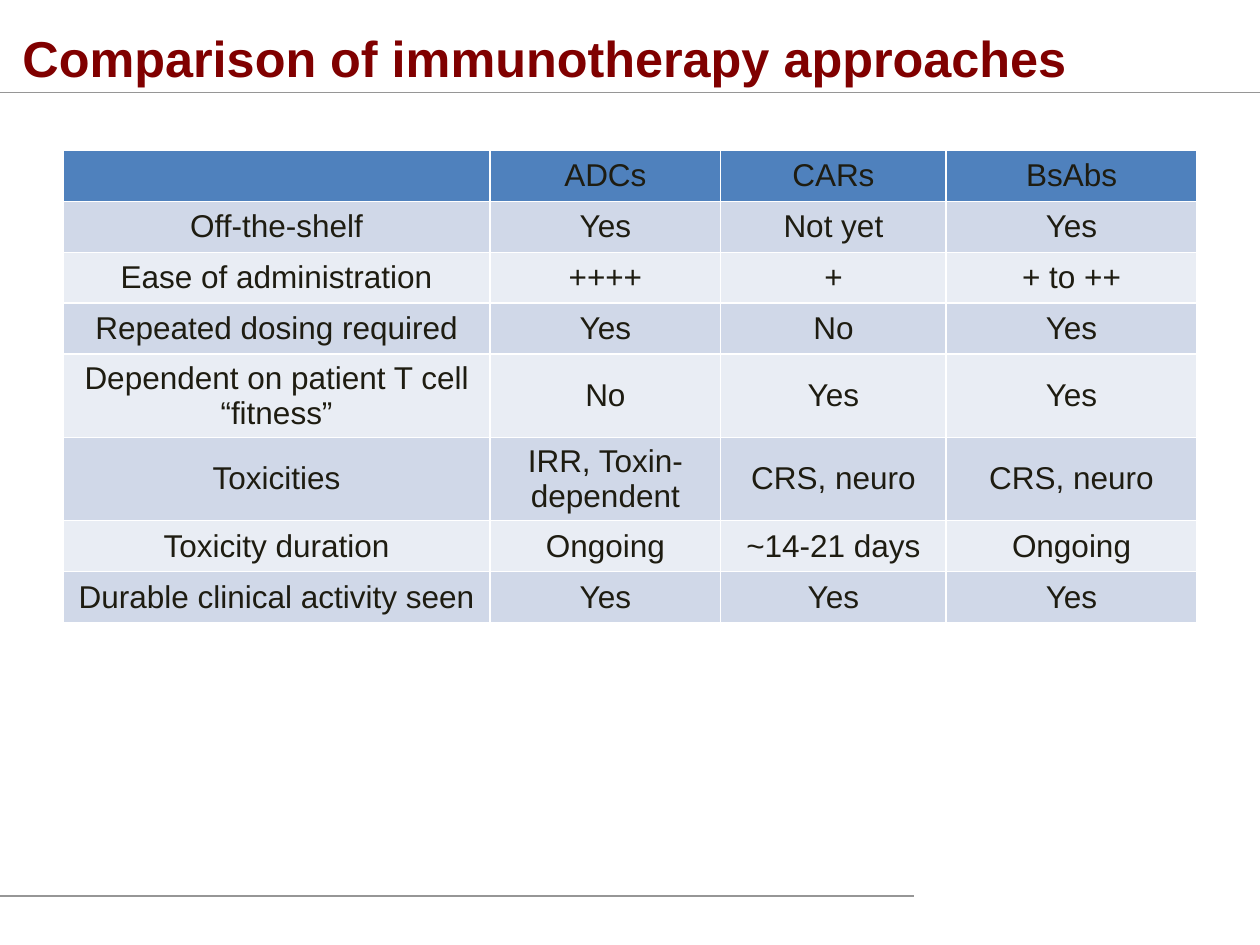
from lxml import etree
from pptx import Presentation
from pptx.dml.color import RGBColor
from pptx.enum.shapes import MSO_CONNECTOR
from pptx.enum.text import MSO_ANCHOR, PP_ALIGN
from pptx.oxml.ns import qn
from pptx.util import Inches, Pt

STRAIGHT = MSO_CONNECTOR.STRAIGHT
MIDDLE = MSO_ANCHOR.MIDDLE
LEFT = PP_ALIGN.LEFT
CENTER = PP_ALIGN.CENTER

MAROON = RGBColor(0x80, 0x00, 0x00)
GRAY = RGBColor(0x96, 0x96, 0x96)
INK = RGBColor(0x1E, 0x1C, 0x11)
WHITE = RGBColor(0xFF, 0xFF, 0xFF)
HEADER_BLUE = RGBColor(0x4F, 0x81, 0xBD)
BANDS = (RGBColor(0xE9, 0xED, 0xF4), RGBColor(0xD0, 0xD8, 0xE8))

TITLE = "Comparison of immunotherapy approaches"
COLUMN_SHARES = (0.339, 0.183, 0.179, 0.199)
ROW_SHARE = 0.054
ROWS = (
    ("", "ADCs", "CARs", "BsAbs"),
    ("Off-the-shelf", "Yes", "Not yet", "Yes"),
    ("Ease of administration", "++++", "+", "+ to ++"),
    ("Repeated dosing required", "Yes", "No", "Yes"),
    ("Dependent on patient T cell “fitness”", "No", "Yes", "Yes"),
    ("Toxicities", "IRR, Toxin-dependent", "CRS, neuro", "CRS, neuro"),
    ("Toxicity duration", "Ongoing", "~14-21 days", "Ongoing"),
    ("Durable clinical activity seen", "Yes", "Yes", "Yes"),
)


def write_text(frame, text, size=18, color=INK, bold=False, align=CENTER):
    paragraph = frame.paragraphs[0]
    paragraph.alignment = align
    paragraph.font.size = Pt(size)
    if text:
        run = paragraph.add_run()
        run.text = text
        run.font.name = "Arial"
        run.font.size = Pt(size)
        run.font.bold = bold
        run.font.color.rgb = color


def set_borders(cell):
    properties = cell._tc.get_or_add_tcPr()
    for side in "LRTB":
        line = etree.SubElement(properties, qn(f"a:ln{side}"), w=str(Pt(1)))
        fill = etree.SubElement(line, qn("a:solidFill"))
        etree.SubElement(fill, qn("a:srgbClr"), val=str(WHITE))


class SlideBuilder:
    def __init__(self, presentation):
        self.width = presentation.slide_width
        self.height = presentation.slide_height
        self.cell_margin = Inches(0.03)
        self.slide = presentation.slides.add_slide(presentation.slide_layouts[6])

    def across(self, share):
        return round(self.width * share)

    def down(self, share):
        return round(self.height * share)

    def rule(self, top, length):
        connector = self.slide.shapes.add_connector(
            STRAIGHT, 0, self.down(top), self.across(length), self.down(top))
        connector.line.color.rgb = GRAY
        connector.line.width = Pt(1)
        etree.SubElement(connector._element.spPr, qn("a:effectLst"))

    def title(self, text, left, top, width, height):
        shape = self.slide.shapes.add_textbox(
            self.across(left), self.down(top), self.across(width), self.down(height))
        frame = shape.text_frame
        frame.word_wrap = True
        frame.vertical_anchor = MIDDLE
        write_text(frame, text, size=28.8, color=MAROON, bold=True, align=LEFT)

    def table(self, rows, left, top, column_shares, row_share):
        table = self.slide.shapes.add_table(
            len(rows), len(column_shares), self.across(left), self.down(top),
            self.across(sum(column_shares)), self.down(row_share * len(rows))).table
        for column, share in zip(table.columns, column_shares):
            column.width = self.across(share)
        for row_index, texts in enumerate(rows):
            table.rows[row_index].height = self.down(row_share)
            color = BANDS[row_index % 2] if row_index else HEADER_BLUE
            for column_index, text in enumerate(texts):
                cell = table.cell(row_index, column_index)
                set_borders(cell)
                cell.fill.solid()
                cell.fill.fore_color.rgb = color
                cell.margin_top = cell.margin_bottom = self.cell_margin
                cell.vertical_anchor = MIDDLE
                write_text(cell.text_frame, text)


def main():
    presentation = Presentation()
    presentation.slide_width = Inches(10)
    presentation.slide_height = Inches(7.5)
    builder = SlideBuilder(presentation)
    builder.rule(top=0.948, length=0.725)
    builder.rule(top=0.098, length=1)
    builder.title(TITLE, left=0.008, top=0.022, width=0.982, height=0.077)
    builder.table(ROWS, left=0.05, top=0.159,
                  column_shares=COLUMN_SHARES, row_share=ROW_SHARE)
    presentation.save("out.pptx")


if __name__ == "__main__":
    main()
